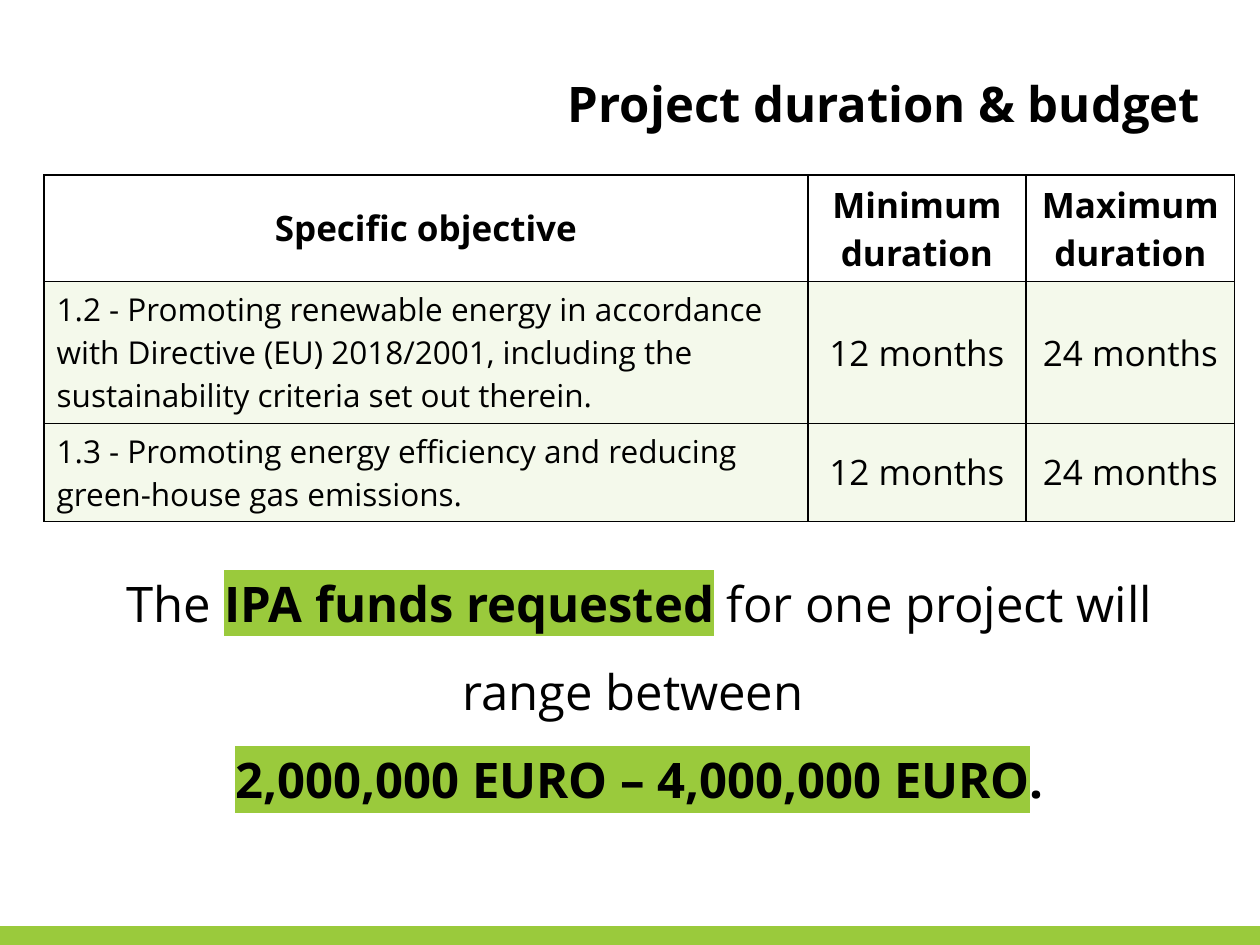
"""Build the project duration and budget slide."""
from lxml import etree
from pptx import Presentation
from pptx import util as u
from pptx.dml.color import RGBColor
from pptx.enum import shapes, text
from pptx.oxml.ns import qn

THEME = {
    "font": "Open Sans", "ink": "000000", "paper": "FFFFFF", "accent": "9ACA3C",
    "tint_alpha": 10, "display": 28, "label": 20, "body": 18, "border": 1,
}
TITLE = "Project duration & budget "
HEADERS = ["Specific objective", "Minimum duration", "Maximum duration"]
OBJECTIVES = [
    ("1.2 - Promoting renewable energy in accordance with Directive (EU) 2018/2001, "
     "including the sustainability criteria set out therein.", "12 months", "24 months"),
    ("1.3 - Promoting energy efficiency and reducing green-house gas emissions.",
     "12 months", "24 months"),
]
BUDGET = [
    [("The ", ""), ("IPA funds requested", "bold highlight"), (" ", "bold"),
     ("for one project will range between ", "")],
    [("2,000,000 EURO – 4,000,000 EURO", "bold highlight"), (".", "bold")],
]
SLIDE_SIZE = (720, 540)
BAND_HEIGHT = 10.8
LEFT = 25.2
COLUMN_WIDTHS = [436.4, 124.8, 119.2]
ROW_HEIGHTS = [61, 81, 56]
CONTENT_WIDTH = sum(COLUMN_WIDTHS)
TABLE_TOP = 100
TITLE_BOX = (308.9, 19.4, 391, 79.2)
BUDGET_BOX = (LEFT, 315.4, CONTENT_WIDTH, 141.8)


def points(values):
    return [u.Pt(value) for value in values]


def add_color(parent, color, alpha=None):
    node = etree.SubElement(parent, qn("a:srgbClr"), val=color)
    if alpha is not None:
        etree.SubElement(node, qn("a:alpha"), val=str(alpha * 1000))


def style_paragraph(paragraph, size, alignment, bold=None):
    paragraph.alignment = alignment
    font = paragraph.font
    font.name, font.size, font.bold = THEME["font"], u.Pt(size), bold
    font.color.rgb = RGBColor.from_string(THEME["ink"])


def add_text_box(slide, box):
    frame = slide.shapes.add_textbox(*points(box)).text_frame
    frame.word_wrap = True
    frame.vertical_anchor = text.MSO_ANCHOR.MIDDLE
    return frame


def style_cell(cell, color, alpha=None):
    properties = cell._tc.get_or_add_tcPr()
    for side in ("lnL", "lnR", "lnT", "lnB"):
        line = etree.SubElement(properties, qn("a:" + side), w=str(u.Pt(THEME["border"])))
        add_color(etree.SubElement(line, qn("a:solidFill")), THEME["ink"])
    add_color(etree.SubElement(properties, qn("a:solidFill")), color, alpha)


def add_band(slide):
    width, height = SLIDE_SIZE
    band = slide.shapes.add_shape(
        shapes.MSO_SHAPE.RECTANGLE, *points((0, height - BAND_HEIGHT, width, BAND_HEIGHT)))
    band.shadow.inherit = False
    band.fill.solid()
    band.fill.fore_color.rgb = RGBColor.from_string(THEME["accent"])
    band.line.fill.background()


def add_duration_table(slide):
    rows = [HEADERS, *OBJECTIVES]
    table = slide.shapes.add_table(
        len(rows), len(HEADERS),
        *points((LEFT, TABLE_TOP, CONTENT_WIDTH, sum(ROW_HEIGHTS)))).table
    table.first_row = table.horz_banding = False
    for column, width in zip(table.columns, COLUMN_WIDTHS):
        column.width = u.Pt(width)
    for row_index, values in enumerate(rows):
        table.rows[row_index].height = u.Pt(ROW_HEIGHTS[row_index])
        header = row_index == 0
        for column_index, value in enumerate(values):
            cell = table.cell(row_index, column_index)
            cell.text = value
            objective = column_index == 0 and not header
            style_paragraph(
                cell.text_frame.paragraphs[0],
                THEME["body"] if objective else THEME["label"],
                text.PP_ALIGN.LEFT if objective else text.PP_ALIGN.CENTER, header)
            cell.vertical_anchor = text.MSO_ANCHOR.TOP if objective else text.MSO_ANCHOR.MIDDLE
            if header:
                style_cell(cell, THEME["paper"])
            else:
                style_cell(cell, THEME["accent"], THEME["tint_alpha"])


def add_budget(slide):
    frame = add_text_box(slide, BUDGET_BOX)
    for index, runs in enumerate(BUDGET):
        paragraph = frame.add_paragraph() if index else frame.paragraphs[0]
        paragraph.line_spacing = 1.5
        style_paragraph(paragraph, THEME["display"], text.PP_ALIGN.CENTER)
        for words, emphasis in runs:
            run = paragraph.add_run()
            run.text = words
            run.font.bold = "bold" in emphasis
            if "highlight" in emphasis:
                properties = run._r.get_or_add_rPr()
                add_color(etree.SubElement(properties, qn("a:highlight")), THEME["accent"])


def main():
    presentation = Presentation()
    presentation.slide_width, presentation.slide_height = points(SLIDE_SIZE)
    slide = presentation.slides.add_slide(presentation.slide_layouts[6])
    add_band(slide)
    title = add_text_box(slide, TITLE_BOX).paragraphs[0]
    title.text = TITLE
    style_paragraph(title, THEME["display"], text.PP_ALIGN.RIGHT, True)
    add_duration_table(slide)
    add_budget(slide)
    presentation.save("out.pptx")


if __name__ == "__main__":
    main()
